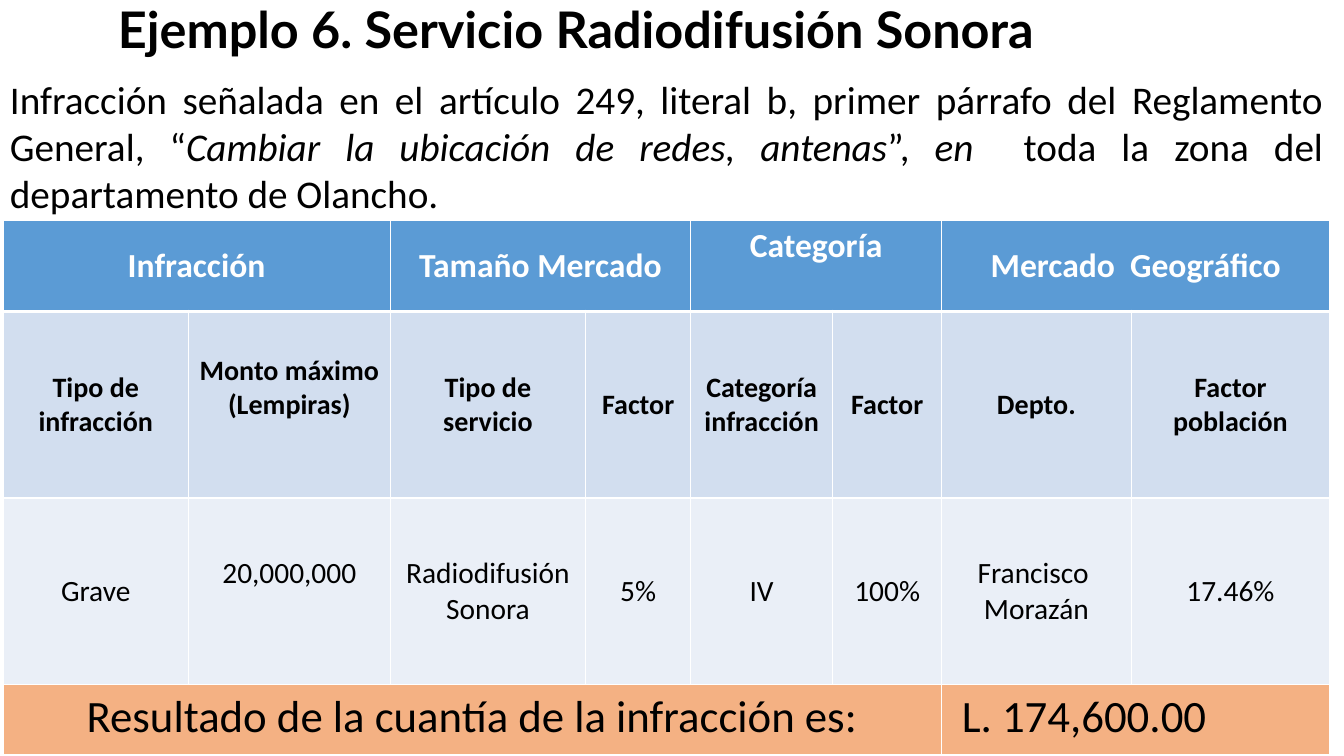
import pptx
import pptx.util
import pptx.oxml
import pptx.dml.color
import pptx.enum.text
from pptx.oxml.ns import qn

Inches = pptx.util.Inches
Pt = pptx.util.Pt
ALIGN = pptx.enum.text.PP_ALIGN
ANCHOR = pptx.enum.text.MSO_ANCHOR

COLORS = {
    "black": "000000",
    "white": "FFFFFF",
    "head": "5B9BD5",
    "label": "D2DEEF",
    "value": "EAEFF7",
    "result": "F4B183",
}

# Table content: (first column, columns spanned, text, extra bottom margin)
WIDTHS = [1.84, 2, 1.94, 1.04, 1.41, 1.08, 1.88, 1.97]
HEIGHTS = [0.9, 1.85, 1.85, 0.7]
HEADS = [
    (0, 2, "Infracción", 0),
    (2, 2, "Tamaño Mercado", 0),
    (4, 2, "Categoría", 0.4),
    (6, 2, "Mercado  Geográfico", 0),
]
LABELS = [
    (0, 1, "Tipo de infracción", 0),
    (1, 1, "Monto máximo\n(Lempiras)", 0.34),
    (2, 1, "Tipo de servicio", 0),
    (3, 1, "Factor", 0),
    (4, 1, "Categoría infracción", 0),
    (5, 1, "Factor", 0),
    (6, 1, "Depto.", 0),
    (7, 1, "Factor\npoblación", 0),
]
VALUES = [
    (0, 1, "Grave", 0),
    (1, 1, "20,000,000", 0.36),
    (2, 1, "Radiodifusión\nSonora", 0),
    (3, 1, "5%", 0),
    (4, 1, "IV", 0),
    (5, 1, "100%", 0),
    (6, 1, "Francisco \nMorazán", 0),
    (7, 1, "17.46%", 0),
]
TOTAL = [(0, 6, "Resultado de la cuantía de la infracción es:", 0)]
AMOUNT = [(6, 2, "L. 174,600.00", 0)]


def rgb(name):
    return pptx.dml.color.RGBColor.from_string(COLORS[name])


def put_text(frame, text, size=20, font="Calibri", color="black",
             bold=False, align=ALIGN.CENTER, space=None):
    """Fill a frame; text is a string or a list of (text, italic) runs."""
    runs = [(text, False)] if isinstance(text, str) else text
    para = frame.paragraphs[0]
    for part, slant in runs:
        for i, line in enumerate(part.split("\n")):
            if i:
                para = frame.add_paragraph()
            para.alignment = align
            para.line_spacing = space
            run = para.add_run()
            run.text = line
            run.font.size = Pt(size)
            run.font.name = font
            run.font.bold = bold
            run.font.italic = slant
            run.font.color.rgb = rgb(color)


def place(shape, left, top, width, height):
    shape.left, shape.top = Inches(left), Inches(top)
    shape.width, shape.height = Inches(width), Inches(height)


def add_edges(cell, below=1):
    """Draw white lines on the four sides of a cell."""
    props = cell._tc.get_or_add_tcPr()
    sides = [("lnL", 1), ("lnR", 1), ("lnT", 1), ("lnB", below)]
    for i, (tag, width) in enumerate(sides):
        line = props.makeelement(qn("a:" + tag), {"w": str(int(Pt(width)))})
        fill = pptx.oxml.parse_xml(
            '<a:solidFill xmlns:a="http://schemas.openxmlformats.org/'
            'drawingml/2006/main"><a:srgbClr val="%s"/></a:solidFill>'
            % COLORS["white"])
        line.append(fill)
        props.insert(i, line)


def add_title(slide, text):
    title = slide.shapes.title
    place(title, 1.07, 0, 11.5, 0.91)
    frame = title.text_frame
    frame.word_wrap = True
    frame.vertical_anchor = ANCHOR.TOP
    put_text(frame, text, size=36, font="Lato", bold=True,
             align=ALIGN.LEFT, space=0.9)


def add_intro(slide, runs):
    box = slide.shapes.add_textbox(
        Inches(0), Inches(0.7), Inches(13.22), Inches(1.99))
    box.text_frame.word_wrap = True
    put_text(box.text_frame, runs, size=28, align=ALIGN.JUSTIFY)


def fill_row(table, row, items, fill, anchor=ANCHOR.MIDDLE, left=0.1, **style):
    for col, span, text, lift in items:
        cell = table.cell(row, col)
        if span > 1:
            cell.merge(table.cell(row, col + span - 1))
        cell.vertical_anchor = anchor
        cell.margin_left = Inches(left)
        cell.margin_bottom = Inches(0.05 + lift)
        put_text(cell.text_frame, text, **style)
        for k in range(col, col + span):
            part = table.cell(row, k)
            part.fill.solid()
            part.fill.fore_color.rgb = rgb(fill)
            add_edges(part, below=1 if row else 3)


def add_grid(slide):
    table = slide.shapes.add_table(
        len(HEIGHTS), len(WIDTHS), Inches(0.03), Inches(2.19),
        Inches(sum(WIDTHS)), Inches(sum(HEIGHTS))).table
    table.first_row = table.horz_banding = False
    for col, width in zip(table.columns, WIDTHS):
        col.width = Inches(width)
    for row, height in zip(table.rows, HEIGHTS):
        row.height = Inches(height)
    fill_row(table, 0, HEADS, "head", size=24, color="white", bold=True)
    fill_row(table, 1, LABELS, "label", bold=True)
    fill_row(table, 2, VALUES, "value", size=21)
    fill_row(table, 3, TOTAL, "result", anchor=ANCHOR.TOP, size=32)
    fill_row(table, 3, AMOUNT, "result", anchor=ANCHOR.TOP, left=0.2,
             size=32, align=ALIGN.LEFT)


def main():
    deck = pptx.Presentation()
    deck.slide_width, deck.slide_height = Inches(13.33), Inches(7.5)
    slide = deck.slides.add_slide(deck.slide_layouts[5])

    # Heading and description
    add_title(slide, "Ejemplo 6. Servicio Radiodifusión Sonora")
    add_intro(slide, [
        ("Infracción señalada en el artículo 249, literal b, primer párrafo "
         "del Reglamento General, “", False),
        ("Cambiar la ubicación de redes, antenas", True),
        ("”, ", False),
        ("en  ", True),
        ("toda la zona del departamento de Olancho.", False),
    ])

    # Calculation of the fine
    add_grid(slide)
    deck.save("out.pptx")


if __name__ == "__main__":
    main()
